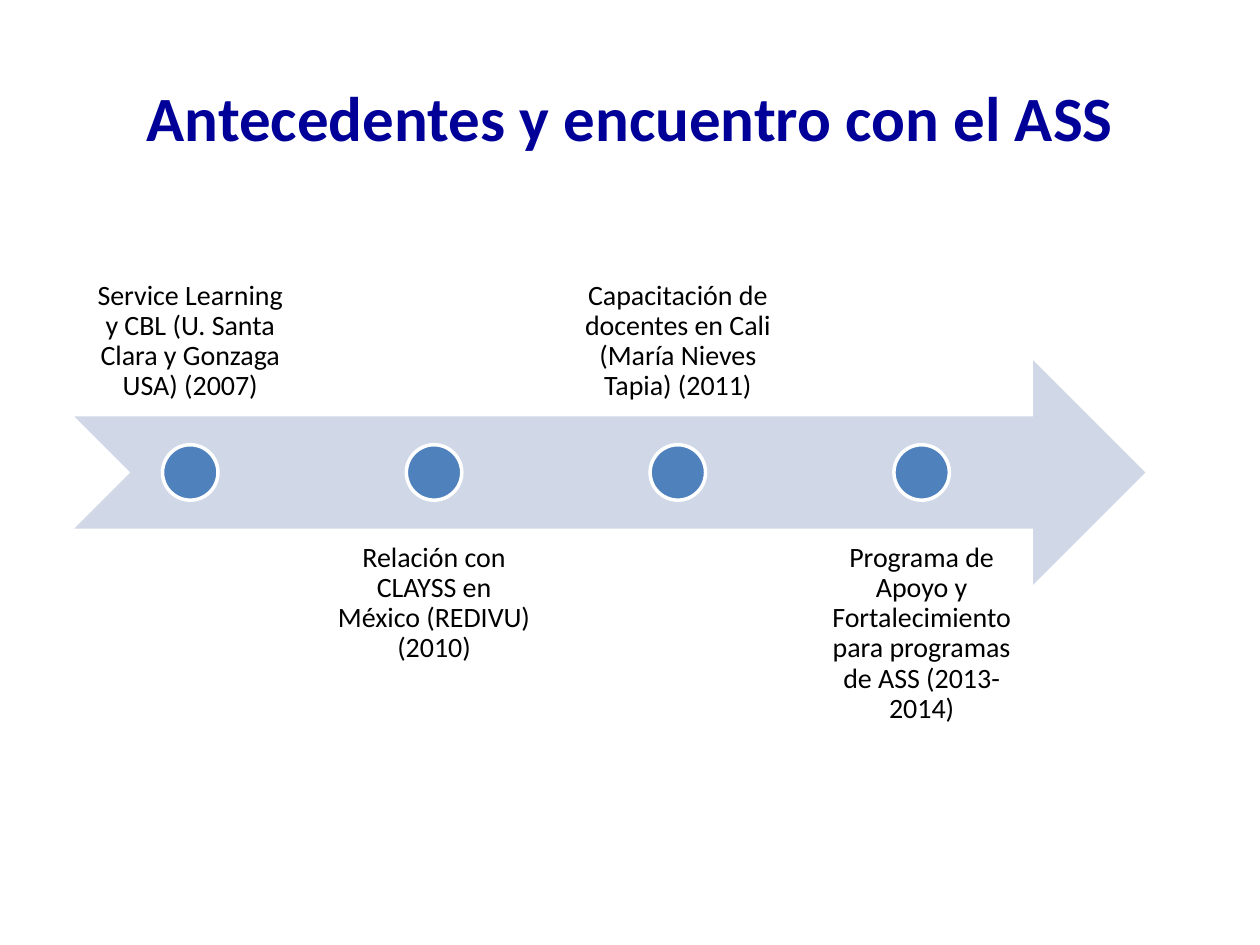
"""Build the timeline slide on the background to the ASS programme."""
from dataclasses import dataclass

from pptx import Presentation
from pptx.dml import color
from pptx.enum import shapes, text
from pptx.util import Inches, Pt

FONT = "Calibri"
FIRST_LEFT, STEP = 0.59, 1.935
LABEL_WIDTH, LABEL_HEIGHT = 1.84, 1.78
UPPER_TOP, LOWER_TOP = 1.53, 4.19
DOT_SIZE, DOT_TOP = 0.44, 3.53


@dataclass
class Milestone:
    label: str
    above: bool


MILESTONES = [
    Milestone("Service Learning y CBL (U. Santa Clara y Gonzaga USA) (2007)", True),
    Milestone("Relación con CLAYSS en México (REDIVU) (2010)", False),
    Milestone("Capacitación de docentes en Cali (María Nieves Tapia) (2011)", True),
    Milestone("Programa de Apoyo y Fortalecimiento para programas de ASS (2013-2014)", False),
]


def rgb(value: str) -> color.RGBColor:
    return color.RGBColor.from_string(value)


def style_paragraph(paragraph, size: float, hex_color: str, bold: bool = False) -> None:
    paragraph.alignment = text.PP_ALIGN.CENTER
    font = paragraph.font
    font.name, font.size, font.bold = FONT, Pt(size), bold
    font.color.rgb = rgb(hex_color)


def add_title(slide, wording: str) -> None:
    title = slide.shapes.title
    title.left, title.top = Inches(0.5), Inches(0.3)
    title.width, title.height = Inches(9), Inches(1.25)
    title.text_frame.text = wording
    title.text_frame.vertical_anchor = text.MSO_ANCHOR.MIDDLE
    style_paragraph(title.text_frame.paragraphs[0], 36, "000099", bold=True)


def add_filled_shape(slide, kind, left: float, top: float, width: float, height: float, fill: str):
    shape = slide.shapes.add_shape(kind, Inches(left), Inches(top), Inches(width), Inches(height))
    shape.shadow.inherit = False
    shape.fill.solid()
    shape.fill.fore_color.rgb = rgb(fill)
    shape.line.fill.background()
    return shape


def add_milestone(slide, milestone: Milestone, left: float) -> None:
    top = UPPER_TOP if milestone.above else LOWER_TOP
    label = slide.shapes.add_textbox(Inches(left), Inches(top), Inches(LABEL_WIDTH), Inches(LABEL_HEIGHT))
    frame = label.text_frame
    frame.word_wrap = True
    frame.margin_left = frame.margin_right = frame.margin_top = frame.margin_bottom = Inches(0.12)
    frame.vertical_anchor = text.MSO_ANCHOR.BOTTOM if milestone.above else text.MSO_ANCHOR.TOP
    frame.text = milestone.label
    paragraph = frame.paragraphs[0]
    paragraph.line_spacing = 0.9
    style_paragraph(paragraph, 16, "000000")

    dot_left = left + (LABEL_WIDTH - DOT_SIZE) / 2
    dot = add_filled_shape(slide, shapes.MSO_SHAPE.OVAL, dot_left, DOT_TOP, DOT_SIZE, DOT_SIZE, "4F81BD")
    dot.line.color.rgb = rgb("FFFFFF")
    dot.line.width = Pt(2)


def main() -> None:
    presentation = Presentation()
    presentation.slide_width, presentation.slide_height = Inches(10), Inches(7.5)
    slide = presentation.slides.add_slide(presentation.slide_layouts.get_by_name("Title Only"))
    add_title(slide, "Antecedentes y encuentro con el ASS")
    add_filled_shape(slide, shapes.MSO_SHAPE.NOTCHED_RIGHT_ARROW, FIRST_LEFT, 2.86, 8.5, 1.78, "D0D8E8")
    for index, milestone in enumerate(MILESTONES):
        add_milestone(slide, milestone, FIRST_LEFT + index * STEP)
    presentation.save("out.pptx")


if __name__ == "__main__":
    main()
